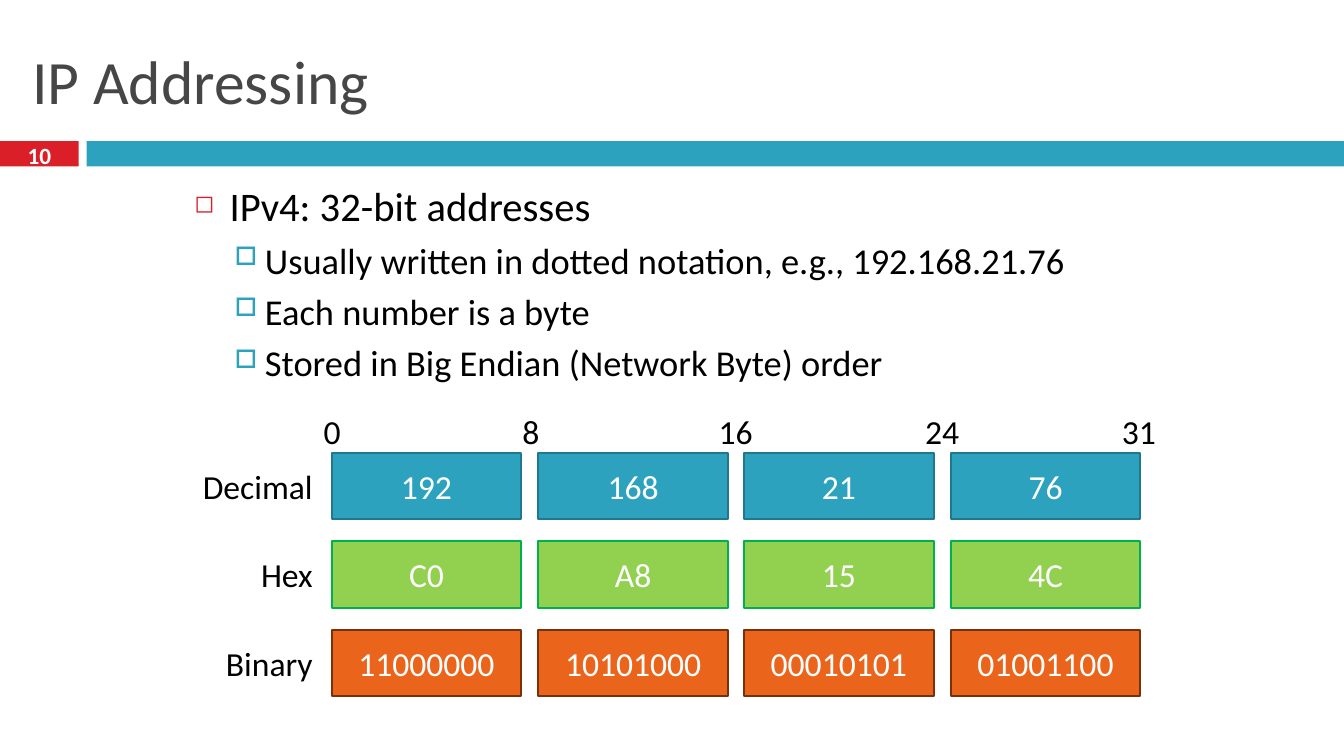
"""Build the IP Addressing slide: IPv4 notes above one address in three bases."""
import pptx
import pptx.dml.color
import pptx.enum.shapes
import pptx.enum.text
import pptx.util
import lxml.etree

PX = 9144
FONT = "Calibri"
COLORS = {
    "red": "DA1F28", "teal": "2DA2BF", "teal_edge": "21788D",
    "green": "92D050", "green_edge": "00B050",
    "orange": "EB641B", "orange_edge": "78310B",
    "title": "464646", "black": "000000", "white": "FFFFFF",
}
ALIGN = pptx.enum.text.PP_ALIGN
ANCHOR = pptx.enum.text.MSO_ANCHOR

presentation = pptx.Presentation()
presentation.slide_width = 1333 * PX
presentation.slide_height = 750 * PX
slide = presentation.slides.add_slide(presentation.slide_layouts[6])


def add_box(left, top, width, height, fill=None, edge=None):
    """Add a filled rectangle, or a text box when no fill is given."""
    place = [length * PX for length in (left, top, width, height)]
    if fill is None:
        box = slide.shapes.add_textbox(*place)
    else:
        box = slide.shapes.add_shape(pptx.enum.shapes.MSO_SHAPE.RECTANGLE, *place)
        box.shadow.inherit = False
        box.fill.solid()
        box.fill.fore_color.rgb = pptx.dml.color.RGBColor.from_string(COLORS[fill])
        if edge is None:
            box.line.fill.background()
        else:
            box.line.color.rgb = pptx.dml.color.RGBColor.from_string(COLORS[edge])
            box.line.width = pptx.util.Pt(1.5)
    box.text_frame.word_wrap = True
    box.text_frame.vertical_anchor = ANCHOR.MIDDLE
    return box


def write(paragraph, text, size, color, align=ALIGN.LEFT, bold=False):
    """Add one formatted run to a paragraph."""
    paragraph.alignment = align
    run = paragraph.add_run()
    run.text = text
    run.font.name = FONT
    run.font.size = pptx.util.Pt(size)
    run.font.bold = bold
    run.font.color.rgb = pptx.dml.color.RGBColor.from_string(COLORS[color])


add_box(0, 140, 78, 25, "red")
add_box(86, 140, 1247, 25, "teal")

title = add_box(22, 25, 1289, 108)
write(title.text_frame.paragraphs[0], "IP Addressing", 44, "title")

page_number = add_box(0, 137, 78, 33)
write(page_number.text_frame.paragraphs[0], "10", 16.6, "white", ALIGN.CENTER, True)

notes = add_box(183, 175, 967, 233).text_frame
notes.vertical_anchor = ANCHOR.TOP
main_style = (0, 29, 7, 35, 35, "◻", "red", 60)
sub_style = (1, 26, 5.5, 70, 30, "□", "teal", 70)
points = [
    ("IPv4: 32-bit addresses", main_style),
    ("Usually written in dotted notation, e.g., 192.168.21.76", sub_style),
    ("Each number is a byte", sub_style),
    ("Stored in Big Endian (Network Byte) order", sub_style),
]
for index, (text, style) in enumerate(points):
    level, size, gap, margin, hang, bullet, bullet_color, bullet_size = style
    point = notes.add_paragraph() if index else notes.paragraphs[0]
    point.level = level
    point.space_before = pptx.util.Pt(gap)
    write(point, text, size, "black")
    properties = point._p.get_or_add_pPr()
    properties.set("marL", str(margin * PX))
    properties.set("indent", str(-hang * PX))
    namespace = properties.nsmap["a"]
    tint = lxml.etree.SubElement(properties, f"{{{namespace}}}buClr")
    lxml.etree.SubElement(tint, f"{{{namespace}}}srgbClr", val=COLORS[bullet_color])
    lxml.etree.SubElement(properties, f"{{{namespace}}}buSzPct", val=str(bullet_size * 1000))
    lxml.etree.SubElement(properties, f"{{{namespace}}}buChar", char=bullet)

bases = [
    ("Decimal", "teal", ["192", "168", "21", "76"]),
    ("Hex", "green", ["C0", "A8", "15", "4C"]),
    ("Binary", "orange", ["11000000", "10101000", "00010101", "01001100"]),
]
for row, (base, color, octets) in enumerate(bases):
    top = 449 + 88 * row
    base_label = add_box(172, top, 148, 66)
    write(base_label.text_frame.paragraphs[0], base, 24, "black", ALIGN.RIGHT)
    for column, octet in enumerate(octets):
        left = 329 + round(column * 614 / 3)
        cell = add_box(left, top, 188, 66, color, f"{color}_edge")
        write(cell.text_frame.paragraphs[0], octet, 24, "white", ALIGN.CENTER)

bit_positions = [("0", 297), ("8", 494), ("16", 697), ("24", 902), ("31", 1097)]
for bit, left in bit_positions:
    bit_label = add_box(left, 395, 65, 66)
    write(bit_label.text_frame.paragraphs[0], bit, 24, "black", ALIGN.CENTER)

presentation.save("out.pptx")
